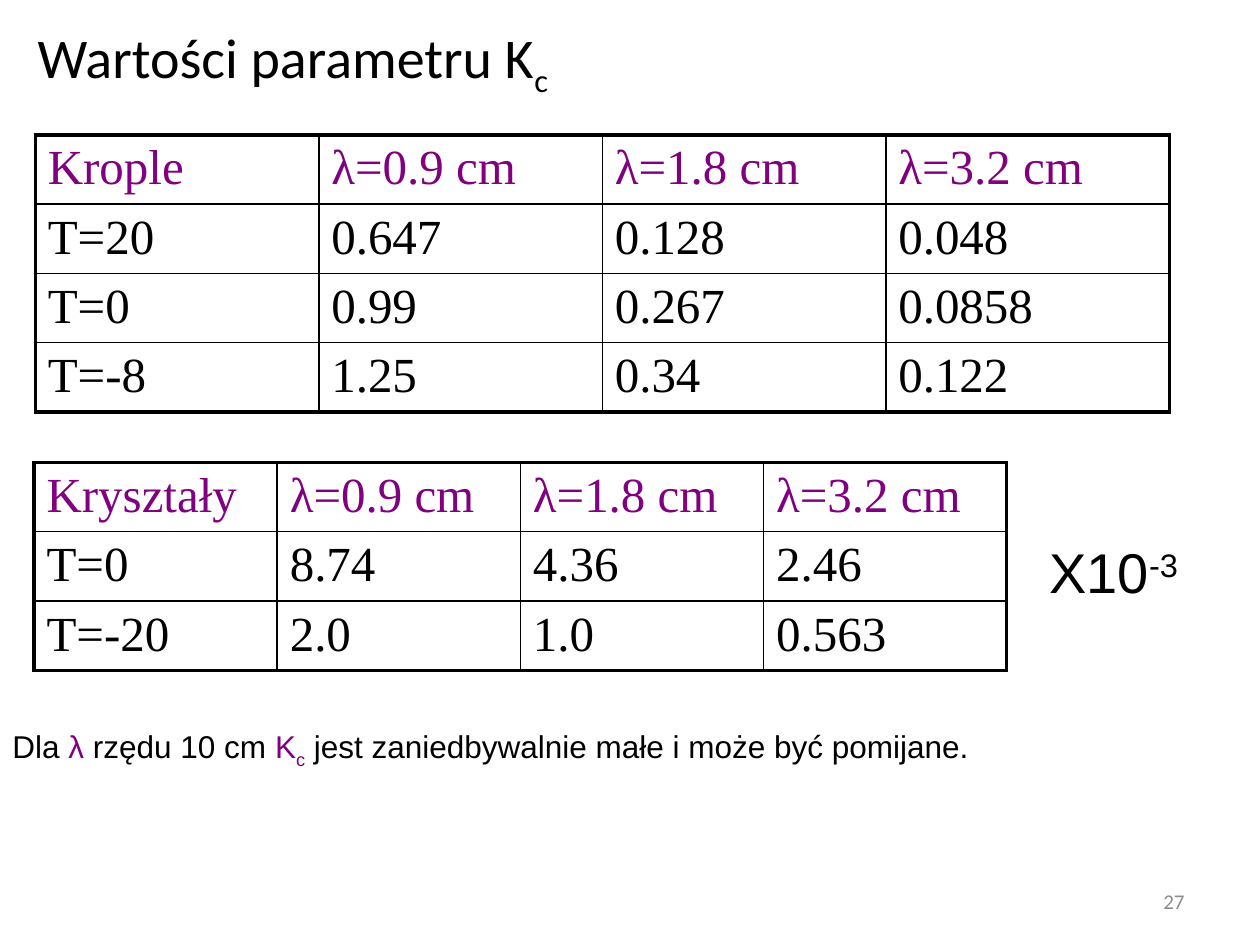
from lxml.etree import SubElement
from pptx import Presentation
from pptx.dml.color import RGBColor
from pptx.enum.text import MSO_ANCHOR as Anchor, PP_ALIGN as Align
from pptx.oxml.ns import qn
from pptx.util import Inches, Pt

THEME = {
    "black": "000000", "purple": "800080", "gray": "8C8C8C",
    "title": ("Calibri", 32), "factor": ("Arial", 32), "note": ("Arial", 18),
    "table": ("Times New Roman", 28), "number": ("Calibri", 12),
    "outer": 2.25, "inner": 1,
}
WIDTH, HEIGHT = 10, 7.5
ROW_HEIGHT = 0.55
SUBSCRIPT, SUPERSCRIPT = -25000, 30000

WAVELENGTHS = ["λ=0.9 cm", "λ=1.8 cm", "λ=3.2 cm"]
TABLES = [
    {"left": 0.28, "top": 1.07, "column": 2.25, "rows": [
        ["Krople", *WAVELENGTHS],
        ["T=20", "0.647", "0.128", "0.048"],
        ["T=0", "0.99", "0.267", "0.0858"],
        ["T=-8", "1.25", "0.34", "0.122"],
    ]},
    {"left": 0.27, "top": 3.67, "column": 1.93, "rows": [
        ["Kryształy", *WAVELENGTHS],
        ["T=0", "8.74", "4.36", "2.46"],
        ["T=-20", "2.0", "1.0", "0.563"],
    ]},
]
TEXTS = [
    {"box": (0.2, 0.13, 9.53, 0.64), "style": "title",
     "runs": [("Wartości parametru K", "black", 0), ("c", "black", SUBSCRIPT)]},
    {"box": (8.23, 4.22, 1.77, 0.63), "style": "factor", "before": 50,
     "runs": [("X10", "black", 0), ("-3", "black", SUPERSCRIPT)]},
    {"box": (0, 5.72, 9.41, 0.9), "style": "note", "before": 50,
     "runs": [("Dla ", "black", 0), ("λ", "purple", 0),
              (" rzędu 10 cm ", "black", 0), ("K", "purple", 0),
              ("c", "purple", SUBSCRIPT),
              (" jest zaniedbywalnie małe i może być pomijane.", "black", 0)]},
    {"box": (7.17, 6.95, 2.33, 0.4), "style": "number",
     "align": Align.RIGHT, "anchor": Anchor.MIDDLE,
     "runs": [("27", "gray", 0)]},
]


def set_all(target, values):
    for name, value in values.items():
        setattr(target, name, value)


def write(paragraph, runs, style, before=0):
    family, size = THEME[style]
    for text, color, baseline in runs:
        run = paragraph.add_run()
        run.text = text
        set_all(run.font, {"name": family, "size": Pt(size)})
        run.font.color.rgb = RGBColor.from_string(THEME[color])
        if baseline:
            run.font._element.set("baseline", str(baseline))
    if before:
        paragraph.space_before = Pt(0)
        spacing = paragraph._p.pPr.find(qn("a:spcBef"))
        spacing.remove(spacing[0])
        SubElement(spacing, qn("a:spcPct"), val=str(before * 1000))


def add_text(slide, box, style, runs, before=0, align=Align.LEFT, anchor=Anchor.TOP):
    frame = slide.shapes.add_textbox(*map(Inches, box)).text_frame
    set_all(frame, {"word_wrap": True, "vertical_anchor": anchor})
    paragraph = frame.paragraphs[0]
    paragraph.alignment = align
    write(paragraph, runs, style, before)


def add_borders(cell, edges):
    properties = cell._tc.get_or_add_tcPr()
    for side, is_outer in edges.items():
        width = THEME["outer" if is_outer else "inner"]
        line = SubElement(properties, qn(f"a:ln{side}"), w=str(Pt(width)))
        fill = SubElement(line, qn("a:solidFill"))
        SubElement(fill, qn("a:srgbClr"), val=THEME["black"])


def add_grid(slide, left, top, column, rows):
    row_count, column_count = len(rows), len(rows[0])
    table = slide.shapes.add_table(
        row_count, column_count, Inches(left), Inches(top),
        Inches(column * column_count), Inches(ROW_HEIGHT * row_count)).table
    set_all(table, {"first_row": False, "horz_banding": False})
    for y, values in enumerate(rows):
        table.rows[y].height = Inches(ROW_HEIGHT)
        for x, value in enumerate(values):
            cell = table.cell(y, x)
            add_borders(cell, {"L": x == 0, "R": x == column_count - 1,
                               "T": y == 0, "B": y == row_count - 1})
            cell.fill.background()
            color = "black" if y else "purple"
            write(cell.text_frame.paragraphs[0], [(value, color, 0)], "table", 20)


def main():
    presentation = Presentation()
    set_all(presentation, {"slide_width": Inches(WIDTH), "slide_height": Inches(HEIGHT)})
    slide = presentation.slides.add_slide(presentation.slide_layouts[6])
    for grid in TABLES:
        add_grid(slide, **grid)
    for text in TEXTS:
        add_text(slide, **text)
    presentation.save("out.pptx")


if __name__ == "__main__":
    main()
